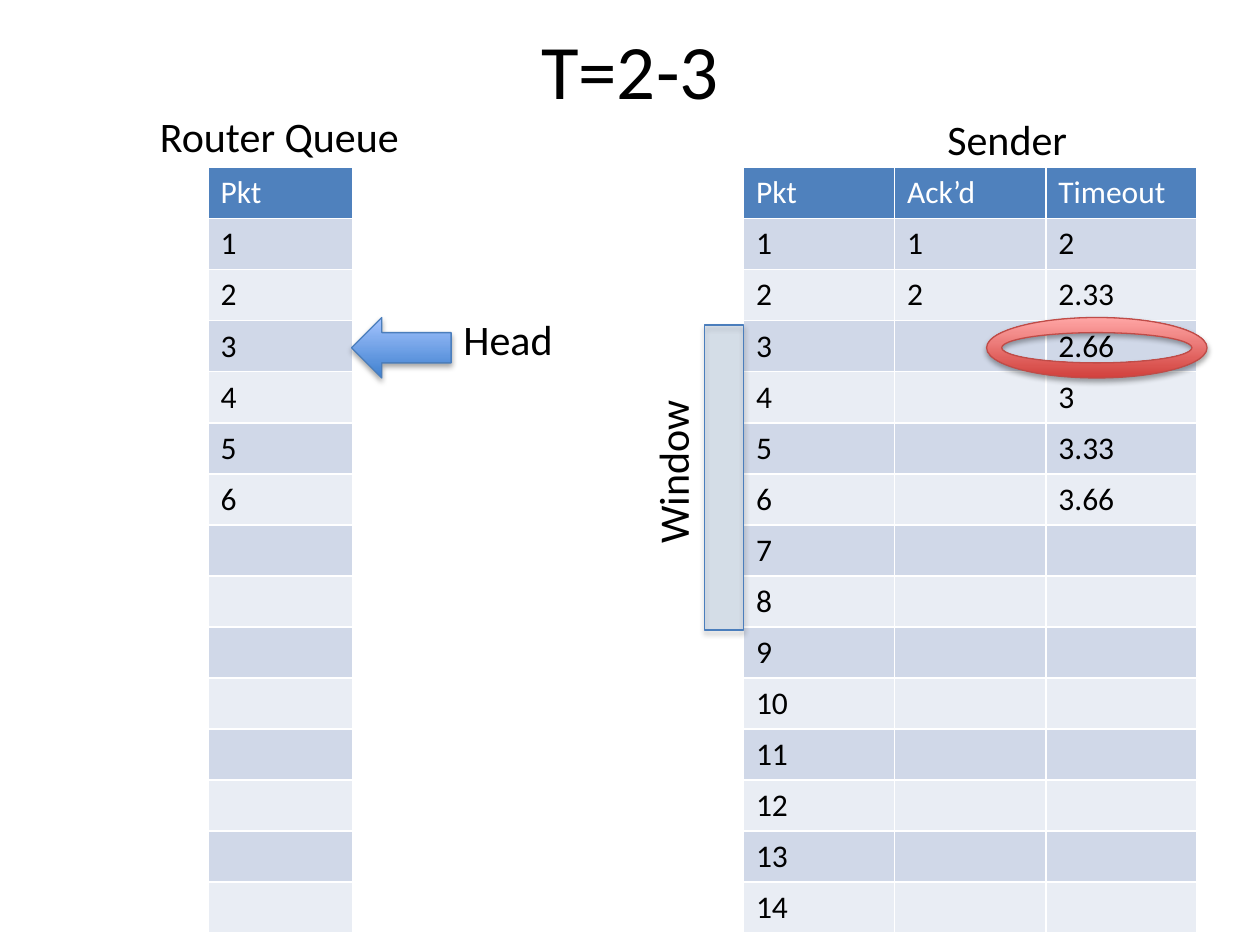
import pptx
import pptx.dml.color
import pptx.enum.shapes
import pptx.enum.text
import pptx.oxml
import pptx.oxml.ns
import pptx.util
from pptx.util import Inches

RGBColor = pptx.dml.color.RGBColor
MSO_SHAPE = pptx.enum.shapes.MSO_SHAPE
PP_ALIGN = pptx.enum.text.PP_ALIGN
MSO_ANCHOR = pptx.enum.text.MSO_ANCHOR

BLACK = RGBColor(0x00, 0x00, 0x00)
WHITE = RGBColor(0xFF, 0xFF, 0xFF)
BLUE = RGBColor(0x4F, 0x81, 0xBD)
BLUE_LINE = RGBColor(0x4B, 0x7E, 0xBC)
BLUE_DARK = RGBColor(0x3F, 0x80, 0xCE)
BLUE_LIGHT = RGBColor(0xA4, 0xC4, 0xFF)
RED_LINE = RGBColor(0xBF, 0x4C, 0x48)
RED_DARK = RGBColor(0xD1, 0x40, 0x3C)
RED_LIGHT = RGBColor(0xFF, 0xA6, 0xA5)
BANDS = [RGBColor(0xE9, 0xED, 0xF4), RGBColor(0xD0, 0xD8, 0xE8)]


def write(tf, text, size=24, color=BLACK, align=PP_ALIGN.LEFT,
          anchor=MSO_ANCHOR.TOP, wrap=False):
    tf.word_wrap = wrap
    tf.vertical_anchor = anchor
    p = tf.paragraphs[0]
    p.alignment = align
    p.font.size = pptx.util.Pt(size)
    if text:
        r = p.add_run()
        r.text = text
        r.font.name = "Calibri"
        r.font.size = pptx.util.Pt(size)
        r.font.bold = False
        r.font.color.rgb = color


def add_raised(shapes, kind, box, line, stops):
    """Outlined shape with a soft shadow; one stop is a tint, two a gradient."""
    sp = shapes.add_shape(kind, *map(Inches, box))
    sp.line.color.rgb = line
    sp.line.width = pptx.util.Pt(0.75)
    if len(stops) == 1:
        sp.fill.solid()
        sp.fill.fore_color.rgb = stops[0]
        clr = sp.fill._xPr.find(".//" + pptx.oxml.ns.qn("a:srgbClr"))
        clr.append(pptx.oxml.parse_xml(
            f'<a:alpha {pptx.oxml.ns.nsdecls("a")} val="17000"/>'))
    else:
        sp.fill.gradient()
        sp.fill.gradient_angle = 90
        for i, color in enumerate(stops):
            sp.fill.gradient_stops[i].color.rgb = color
            sp.fill.gradient_stops[i].position = i
    sp.shadow.inherit = False
    effects = sp._element.spPr.find(pptx.oxml.ns.qn("a:effectLst"))
    effects.append(pptx.oxml.parse_xml(
        f'<a:outerShdw {pptx.oxml.ns.nsdecls("a")} blurRad="40000" dist="23000" '
        'dir="5400000" rotWithShape="0"><a:srgbClr val="000000">'
        '<a:alpha val="35000"/></a:srgbClr></a:outerShdw>'))


prs = pptx.Presentation()
prs.slide_width, prs.slide_height = Inches(10), Inches(7.5)
s = prs.slides.add_slide(prs.slide_layouts[6])

# Title
sp = s.shapes.add_textbox(Inches(0.5), Inches(-0.08), Inches(9), Inches(1.25))
write(sp.text_frame, "T=2-3", size=44, align=PP_ALIGN.CENTER,
      anchor=MSO_ANCHOR.MIDDLE, wrap=True)

# Queue and sender tables, padded to the same number of rows
PACKETS = 14
timeouts = ["2", "2.33", "2.66", "3", "3.33", "3.66"]
queue = [["Pkt"]] + [[str(n) if n <= 6 else ""] for n in range(1, PACKETS + 1)]
sender = [["Pkt", "Ack’d", "Timeout"]] + [
    [str(n), str(n) if n <= 2 else "", timeouts[n - 1] if n <= len(timeouts) else ""]
    for n in range(1, PACKETS + 1)]

for rows, left, width in [(queue, 1.65, 1.15), (sender, 5.9, 3.6)]:
    table = s.shapes.add_table(len(rows), len(rows[0]), Inches(left), Inches(1.33),
                               Inches(width), Inches(6.08)).table
    for i, row in enumerate(rows):
        for j, text in enumerate(row):
            cell = table.cell(i, j)
            cell.fill.solid()
            cell.fill.fore_color.rgb = BANDS[i % 2] if i else BLUE
            write(cell.text_frame, text, size=18, color=BLACK if i else WHITE, wrap=True)

# Window bracket and head pointer, each grouped with its label
window = s.shapes.add_group_shape().shapes
add_raised(window, MSO_SHAPE.RECTANGLE, (5.59, 2.58, 0.31, 2.42), BLUE_LINE, [BLUE])
head = s.shapes.add_group_shape().shapes
add_raised(head, MSO_SHAPE.LEFT_ARROW, (2.79, 2.52, 0.79, 0.48), BLUE_LINE,
           [BLUE_DARK, BLUE_LIGHT])

# Labels
for shapes, text, left, top, width, rotation in [
    (s.shapes, "Router Queue", 1.17, 0.83, 2.12, 0),
    (s.shapes, "Sender", 7.42, 0.85, 1.16, 0),
    (window, "Window", 4.66, 3.49, 1.35, 270),
    (head, "Head", 3.58, 2.44, 0.92, 0),
]:
    sp = shapes.add_textbox(Inches(left), Inches(top), Inches(width), Inches(0.5))
    sp.rotation = rotation
    write(sp.text_frame, text)

# Ring around the expiring timeout
add_raised(s.shapes, MSO_SHAPE.DONUT, (7.83, 2.52, 1.75, 0.48), RED_LINE,
           [RED_DARK, RED_LIGHT])

prs.save("out.pptx")
